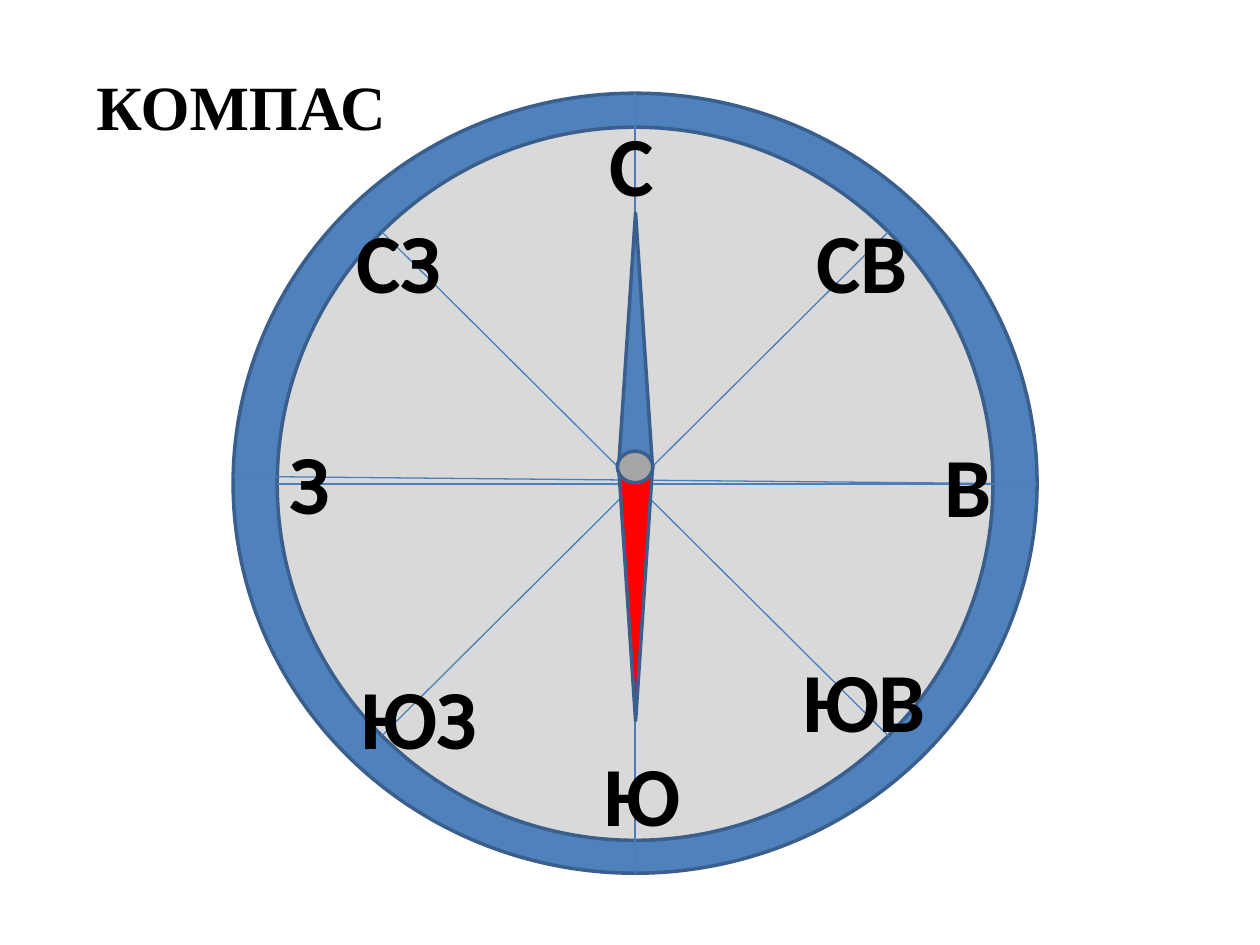
from lxml import etree
from pptx import Presentation
from pptx.dml.color import RGBColor
from pptx.enum.shapes import MSO_CONNECTOR, MSO_SHAPE
from pptx.enum.text import PP_ALIGN
from pptx.oxml.ns import qn
from pptx.util import Pt

OVAL = MSO_SHAPE.OVAL
TRIANGLE = MSO_SHAPE.ISOSCELES_TRIANGLE
STRAIGHT = MSO_CONNECTOR.STRAIGHT
LEFT = PP_ALIGN.LEFT
CENTER = PP_ALIGN.CENTER

BLUE = RGBColor(0x4F, 0x81, 0xBD)
OUTLINE = RGBColor(0x3A, 0x5F, 0x8C)
RAY = RGBColor(0x4B, 0x7E, 0xBC)
DIAL = RGBColor(0xD9, 0xD9, 0xD9)
PIVOT = RGBColor(0xA6, 0xA6, 0xA6)
RED = RGBColor(0xFF, 0x00, 0x00)
BLACK = RGBColor(0x00, 0x00, 0x00)

presentation = Presentation()
presentation.slide_width = Pt(720)
presentation.slide_height = Pt(540)
slide = presentation.slides.add_slide(presentation.slide_layouts[6])


def add_text(text, left, top, width, height, size=48, font="Calibri", align=LEFT):
    box = slide.shapes.add_textbox(Pt(left), Pt(top), Pt(width), Pt(height))
    box.text_frame.word_wrap = True
    paragraph = box.text_frame.paragraphs[0]
    paragraph.alignment = align
    run = paragraph.add_run()
    run.text = text
    run.font.size = Pt(size)
    run.font.name = font
    run.font.bold = True
    run.font.color.rgb = BLACK


def add_part(kind, left, top, width, height, fill, rotation=0):
    shape = slide.shapes.add_shape(kind, Pt(left), Pt(top), Pt(width), Pt(height))
    shape.rotation = rotation
    shape.shadow.inherit = False
    shape.fill.solid()
    shape.fill.fore_color.rgb = fill
    shape.line.color.rgb = OUTLINE
    shape.line.width = Pt(2)


add_part(OVAL, 133.2, 53.3, 459.4, 445.7, BLUE)
add_part(OVAL, 158.4, 72.7, 409, 407.5, DIAL)

rays = [
    (362.9, 53.3, 362.9, 499),
    (218.2, 132.5, 507.6, 420.5),
    (218.2, 420.5, 507.6, 132.5),
    (158.4, 276.5, 567.4, 276.5),
    (133.2, 272.2, 592.6, 276.5),
]
for start_x, start_y, end_x, end_y in rays:
    ray = slide.shapes.add_connector(STRAIGHT, Pt(start_x), Pt(start_y), Pt(end_x), Pt(end_y))
    ray.line.color.rgb = RAY
    ray.line.width = Pt(0.75)
    etree.SubElement(ray._element.spPr, qn("a:effectLst"))

directions = [
    ("С", 341.3, 60.5, 47.5),
    ("Ю", 337.7, 420.5, 36.7),
    ("З", 158.4, 242.6, 37.4),
    ("В", 532.8, 244.1, 43.2),
    ("СВ", 459.4, 115.9, 73.4),
    ("ЮВ", 451.4, 367.2, 89.3),
    ("СЗ", 196.6, 115.9, 67.7),
    ("ЮЗ", 198.7, 376.6, 90.7),
]
for name, left, top, width in directions:
    add_text(name, left, top, width, 64.1)

add_part(TRIANGLE, 353.5, 121.7, 19.4, 145.4, BLUE)
add_part(TRIANGLE, 353.5, 266.4, 19.4, 145.4, RED, rotation=180)
add_part(OVAL, 352.8, 257.8, 20.2, 18, PIVOT)

add_text("КОМПАС", 30.2, 35.3, 215.3, 51.1, size=36, font="Times New Roman", align=CENTER)

presentation.save("out.pptx")
